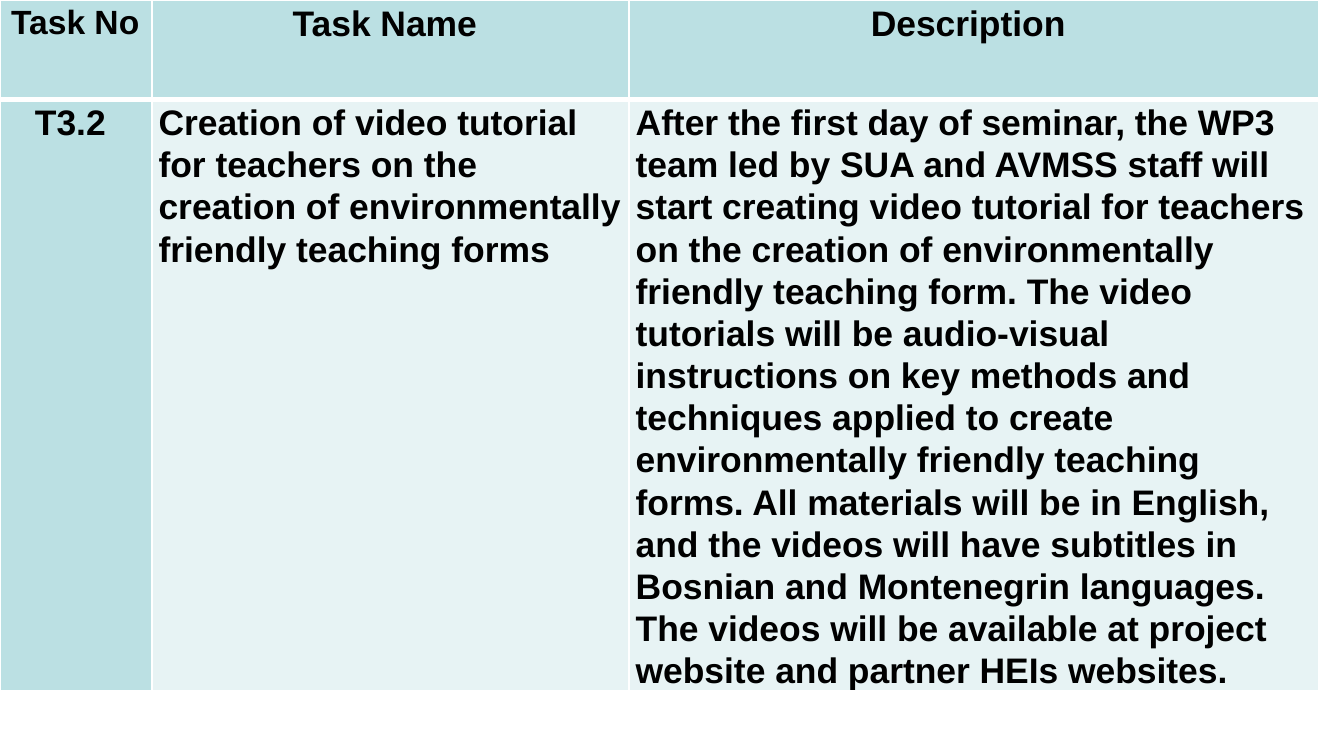
from dataclasses import dataclass

from lxml import etree
from pptx import Presentation
from pptx.dml.color import RGBColor
from pptx.enum import text
from pptx.oxml import ns
from pptx.util import Inches, Pt


@dataclass(frozen=True)
class Theme:
    font: str = "Arial"
    ink: str = "000000"
    accent: str = "BBE0E3"
    body: str = "E7F3F4"
    border: str = "FFFFFF"
    small: float = 18
    size: float = 19
    thin: float = 1
    thick: float = 3


THEME = Theme()
LEFT, CENTER = text.PP_ALIGN.LEFT, text.PP_ALIGN.CENTER
TOP, MIDDLE = text.MSO_ANCHOR.TOP, text.MSO_ANCHOR.MIDDLE

HEADERS = ["Task No ", "Task Name ", "Description "]
TASK = [
    "T3.2 ",
    "Creation of video tutorial for teachers on the creation of "
    "environmentally friendly teaching forms",
    "After the first day of seminar, the WP3 team led by SUA and AVMSS staff "
    "will start creating video tutorial for teachers on the creation of "
    "environmentally friendly teaching form. The video tutorials will be "
    "audio-visual instructions on key methods and techniques applied to "
    "create environmentally friendly teaching forms. All materials will be "
    "in English, and the videos will have subtitles in Bosnian and "
    "Montenegrin languages. The videos will be available at project website "
    "and partner HEIs websites.",
]


def set_text(tf, content, size=THEME.size, align=LEFT):
    p = tf.paragraphs[0]
    p.alignment = align
    p.line_spacing = 1.07
    p.space_after = Pt(8)
    r = p.add_run()
    r.text = content
    r.font.name = THEME.font
    r.font.size = Pt(size)
    r.font.bold = True
    r.font.color.rgb = RGBColor.from_string(THEME.ink)


def set_borders(cell, **widths):
    tc_pr = cell._tc.get_or_add_tcPr()
    for i, side in enumerate("LRTB"):
        ln = etree.Element(ns.qn(f"a:ln{side}"))
        ln.set("w", str(Pt(widths.get(side, THEME.thin))))
        fill = etree.SubElement(ln, ns.qn("a:solidFill"))
        etree.SubElement(fill, ns.qn("a:srgbClr")).set("val", THEME.border)
        tc_pr.insert(i, ln)


def format_cell(cell, fill, anchor=TOP):
    cell.margin_left, cell.margin_right = Inches(0.05), Inches(0.06)
    cell.margin_top, cell.margin_bottom = Inches(0.01), 0
    cell.vertical_anchor = anchor
    cell.fill.solid()
    cell.fill.fore_color.rgb = RGBColor.from_string(fill)


def add_task_table(s, left, top, height, widths, heights):
    frame = s.shapes.add_table(
        len(heights), len(widths), Inches(left), Inches(top),
        Inches(sum(widths)), Inches(height))
    table = frame.table
    for col, width in zip(table.columns, widths):
        col.width = Inches(width)
    for row, row_height in zip(table.rows, heights):
        row.height = Inches(row_height)
    frame.height = Inches(height)

    for c, content in enumerate(HEADERS):
        cell = table.cell(0, c)
        format_cell(cell, THEME.accent)
        set_borders(cell, B=THEME.thick)
        set_text(cell.text_frame, content, align=CENTER,
                 size=THEME.size if c else THEME.small)
    for c, content in enumerate(TASK):
        cell = table.cell(1, c)
        format_cell(cell, THEME.body if c else THEME.accent,
                    anchor=MIDDLE if c == 2 else TOP)
        set_borders(cell, T=THEME.thick)
        set_text(cell.text_frame, content, align=LEFT if c else CENTER)


def main():
    prs = Presentation()
    prs.slide_width = Inches(10)
    prs.slide_height = prs.slide_width * 9 // 16
    s = prs.slides.add_slide(prs.slide_layouts[6])
    add_task_table(s, 0, 0, height=5.49,
                   widths=[1.13, 3.55, 5.13], heights=[0.74, 4.39])
    prs.save("out.pptx")


if __name__ == "__main__":
    main()
